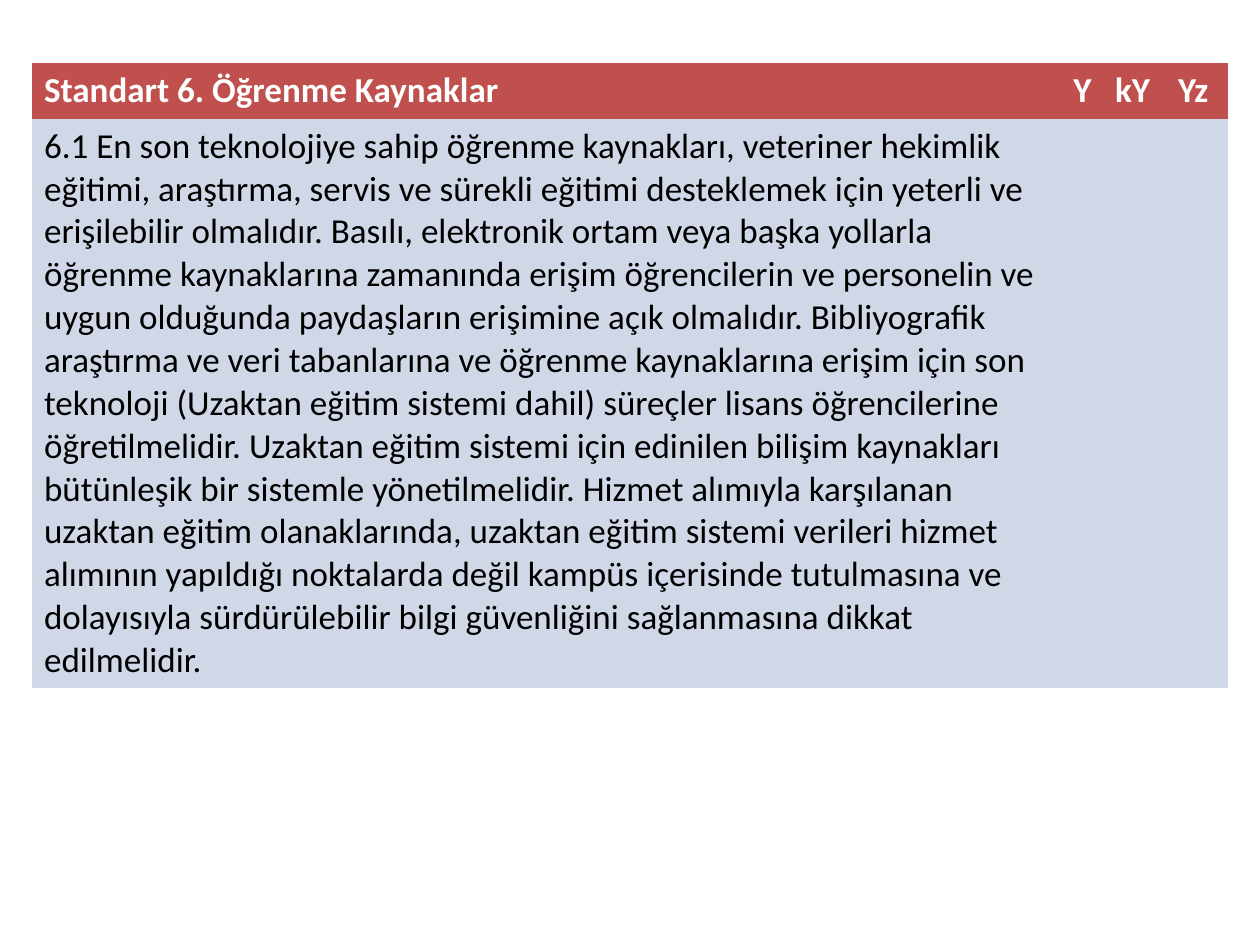
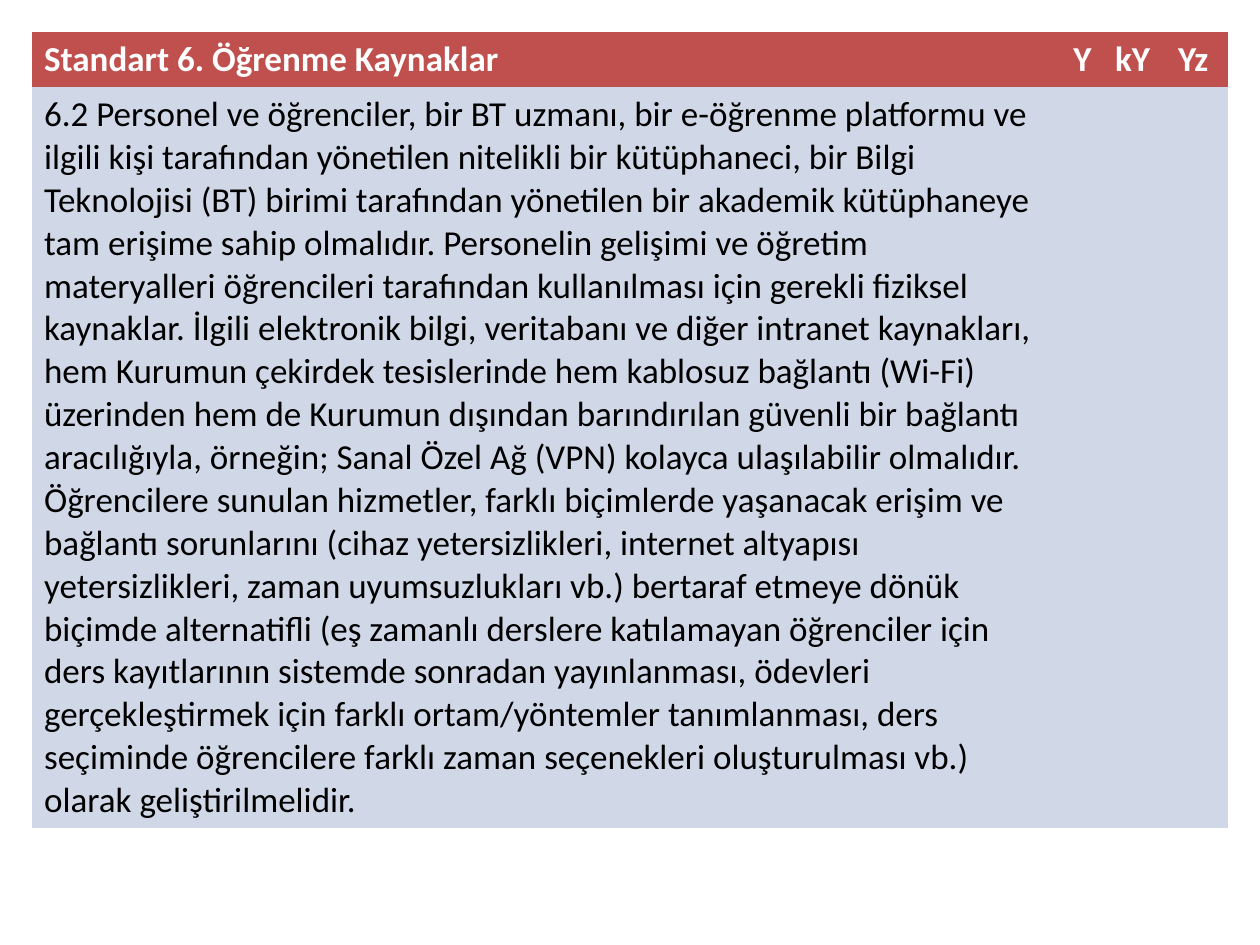
from pptx import Presentation
from pptx.dml.color import RGBColor
from pptx.oxml.ns import qn
from pptx.util import Inches, Pt

BLANK_LAYOUT = 6
PLAIN_TABLE_STYLE = "{2D5ABB26-0587-4C30-8999-92F81FD0307C}"
COLORS = {"header": "C0504D", "body": "D0D8E8", "header_text": "FFFFFF", "body_text": "000000"}

HEADINGS = ["Standart 6. Öğrenme Kaynaklar", "Y", "kY", "Yz"]
COLUMN_SHARES = [0.817, 0.033, 0.05, 0.05]
LEFT_SHARE = (1 - sum(COLUMN_SHARES)) / 2
GRID_ROWS = 30
HEADER_ROWS = 1.76

# Each criterion: top and body height in grid rows, then its sentences
CRITERIA = [
    (2, 18.08, [
        "6.1 En son teknolojiye sahip öğrenme kaynakları, veteriner hekimlik eğitimi, "
        "araştırma, servis ve sürekli eğitimi desteklemek için yeterli ve erişilebilir "
        "olmalıdır.",
        "Basılı, elektronik ortam veya başka yollarla öğrenme kaynaklarına zamanında "
        "erişim öğrencilerin ve personelin ve uygun olduğunda paydaşların erişimine "
        "açık olmalıdır.",
        "Bibliyografik araştırma ve veri tabanlarına ve öğrenme kaynaklarına erişim için "
        "son teknoloji (Uzaktan eğitim sistemi dahil) süreçler lisans öğrencilerine "
        "öğretilmelidir.",
        "Uzaktan eğitim sistemi için edinilen bilişim kaynakları bütünleşik bir sistemle "
        "yönetilmelidir.",
        "Hizmet alımıyla karşılanan uzaktan eğitim olanaklarında, uzaktan eğitim sistemi "
        "verileri hizmet alımının yapıldığı noktalarda değil kampüs içerisinde "
        "tutulmasına ve dolayısıyla sürdürülebilir bilgi güvenliğini sağlanmasına dikkat "
        "edilmelidir.",
    ]),
    (1, 23.52, [
        "6.2 Personel ve öğrenciler, bir BT uzmanı, bir e-öğrenme platformu ve ilgili "
        "kişi tarafından yönetilen nitelikli bir kütüphaneci, bir Bilgi Teknolojisi (BT) "
        "birimi tarafından yönetilen bir akademik kütüphaneye tam erişime sahip "
        "olmalıdır.",
        "Personelin gelişimi ve öğretim materyalleri öğrencileri tarafından kullanılması "
        "için gerekli fiziksel kaynaklar.",
        "İlgili elektronik bilgi, veritabanı ve diğer intranet kaynakları, hem Kurumun "
        "çekirdek tesislerinde hem kablosuz bağlantı (Wi-Fi) üzerinden hem de Kurumun "
        "dışından barındırılan güvenli bir bağlantı aracılığıyla, örneğin; Sanal Özel Ağ "
        "(VPN) kolayca ulaşılabilir olmalıdır.",
        "Öğrencilere sunulan hizmetler, farklı biçimlerde yaşanacak erişim ve bağlantı "
        "sorunlarını (cihaz yetersizlikleri, internet altyapısı yetersizlikleri, zaman "
        "uyumsuzlukları vb.) bertaraf etmeye dönük biçimde alternatifli (eş zamanlı "
        "derslere katılamayan öğrenciler için ders kayıtlarının sistemde sonradan "
        "yayınlanması, ödevleri gerçekleştirmek için farklı ortam/yöntemler "
        "tanımlanması, ders seçiminde öğrencilere farklı zaman seçenekleri oluşturulması "
        "vb.) olarak geliştirilmelidir.",
    ]),
]


class Deck:
    """Holds the shared style and the slide being filled."""
    font = "Calibri"
    size = Pt(20)

    def __init__(self):
        self.prs = Presentation()
        self.prs.slide_width, self.prs.slide_height = Inches(10), Inches(7.5)
        self.s = None

    def x(self, share):
        return round(self.prs.slide_width * share)

    def y(self, rows):
        return round(self.prs.slide_height * rows / GRID_ROWS)

    def slide(self):
        self.s = self.prs.slides.add_slide(self.prs.slide_layouts[BLANK_LAYOUT])

    def cell(self, cell, text, role):
        """Fill a cell and write its text in the colours of its row's role."""
        cell.fill.solid()
        cell.fill.fore_color.rgb = RGBColor.from_string(COLORS[role])
        if text:
            r = cell.text_frame.paragraphs[0].add_run()
            r.text = text
            r.font.name, r.font.size = self.font, self.size
            r.font.bold = role == "header"
            r.font.color.rgb = RGBColor.from_string(COLORS[f"{role}_text"])

    def criterion_table(self, top, body_rows, sentences):
        heights = [HEADER_ROWS, body_rows]
        table = self.s.shapes.add_table(
            len(heights), len(HEADINGS), self.x(LEFT_SHARE), self.y(top),
            self.x(sum(COLUMN_SHARES)), self.y(sum(heights))).table
        table._tbl.tblPr.find(qn("a:tableStyleId")).text = PLAIN_TABLE_STYLE
        table.horz_banding = False
        for column, share in zip(table.columns, COLUMN_SHARES):
            column.width = self.x(share)
        contents = [("header", HEADINGS), ("body", [" ".join(sentences), "", "", ""])]
        for row, height, (role, texts) in zip(table.rows, heights, contents):
            row.height = self.y(height)
            for cell, text in zip(row.cells, texts):
                self.cell(cell, text, role)


def main():
    deck = Deck()
    for criterion in CRITERIA:
        deck.slide()
        deck.criterion_table(*criterion)
    deck.prs.save("out.pptx")


if __name__ == "__main__":
    main()
